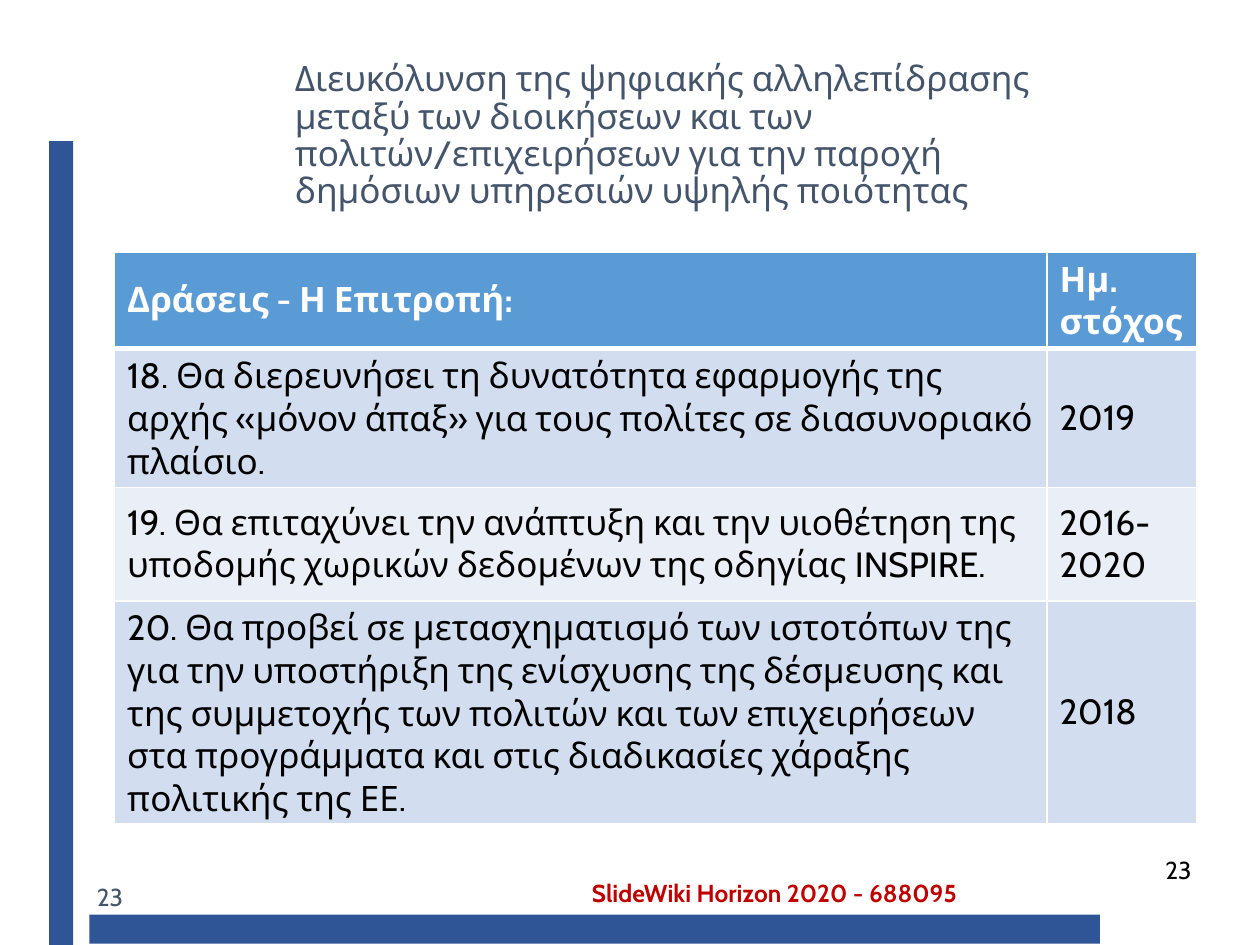
"""Build the slide on digital interaction between administrations and citizens."""
from lxml import etree
from pptx import Presentation
from pptx.dml.color import RGBColor
from pptx.enum import shapes, text
from pptx.oxml import ns
from pptx.util import Inches, Pt

NAVY = RGBColor(0x2F, 0x55, 0x97)
SLATE = RGBColor(0x44, 0x54, 0x6A)
RED = RGBColor(0xC0, 0x00, 0x00)
BLACK = RGBColor(0x00, 0x00, 0x00)
WHITE = RGBColor(0xFF, 0xFF, 0xFF)
HEADER_BLUE = RGBColor(0x5B, 0x9B, 0xD5)
BAND_DARK = RGBColor(0xD2, 0xDE, 0xEF)
BAND_LIGHT = RGBColor(0xEA, 0xEF, 0xF7)


def format_text(frame, size, color, bold=False):
    for para in frame.paragraphs:
        para.alignment = text.PP_ALIGN.LEFT
        for span in para.runs:
            span.font.name = "Cabin"
            span.font.size = Pt(size)
            span.font.bold = bold
            span.font.color.rgb = color


def add_border(properties, side, width):
    line = etree.SubElement(properties, ns.qn("a:" + side), w=str(Pt(width)))
    fill = etree.SubElement(line, ns.qn("a:solidFill"))
    etree.SubElement(fill, ns.qn("a:srgbClr"), val=str(WHITE))


deck = Presentation()
deck.slide_width, deck.slide_height = Inches(10), Inches(7.5)
page = deck.slides.add_slide(deck.slide_layouts[5])

for bounds in [(0.39, 1.12, 0.19, 6.38), (0.71, 7.26, 8.02, 0.23)]:
    bar = page.shapes.add_shape(shapes.MSO_SHAPE.RECTANGLE, *map(Inches, bounds))
    bar.shadow.inherit = False
    bar.fill.solid()
    bar.fill.fore_color.rgb = NAVY
    bar.line.fill.background()

title = page.shapes.title
title.left, title.top = Inches(2.24), Inches(0.44)
title.width, title.height = Inches(6.15), Inches(1.12)
title.text_frame.text = (
    "Διευκόλυνση της ψηφιακής αλληλεπίδρασης μεταξύ των διοικήσεων και των "
    "πολιτών/επιχειρήσεων για την παροχή δημόσιων υπηρεσιών υψηλής ποιότητας"
)
title.text_frame.word_wrap = True
title.text_frame.auto_size = text.MSO_AUTO_SIZE.NONE
title.text_frame.vertical_anchor = text.MSO_ANCHOR.TOP
title.text_frame.paragraphs[0].line_spacing = 0.89
format_text(title.text_frame, 20, SLATE)

labels = [
    ("SlideWiki Horizon 2020 -\u00a0688095", (4.6, 6.92, 3.64, 0.34), RED, True),
    ("23", (0.67, 6.95, 1.02, 0.4), SLATE, False),
    ("23", (9.15, 6.74, 0.76, 0.44), BLACK, False),
]
for words, bounds, color, bold in labels:
    box = page.shapes.add_textbox(*map(Inches, bounds))
    box.text_frame.word_wrap = True
    box.text_frame.text = words
    format_text(box.text_frame, 14, color, bold)

actions = [
    ("Δράσεις - Η Επιτροπή:", "Ημ. στόχος"),
    ("18. Θα διερευνήσει τη δυνατότητα εφαρμογής της αρχής «μόνον άπαξ» "
     "για τους πολίτες σε διασυνοριακό πλαίσιο.", "2019"),
    ("19. Θα επιταχύνει την ανάπτυξη και την υιοθέτηση της υποδομής χωρικών "
     "δεδομένων της οδηγίας INSPIRE.", "2016-2020"),
    ("20. Θα προβεί σε μετασχηματισμό των ιστοτόπων της για την υποστήριξη της "
     "ενίσχυσης της δέσμευσης και της συμμετοχής των πολιτών και των "
     "επιχειρήσεων στα προγράμματα και στις διαδικασίες χάραξης πολιτικής "
     "της ΕΕ.", "2018"),
]
row_heights = [0.64, 0.9, 0.9, 1.43]
row_fills = [HEADER_BLUE, BAND_DARK, BAND_LIGHT, BAND_DARK]
table = page.shapes.add_table(
    len(actions), 2, Inches(0.91), Inches(2), Inches(8.59), Inches(sum(row_heights))
).table
for column, width in zip(table.columns, [7.4, 1.19]):
    column.width = Inches(width)
for index, (row, entries) in enumerate(zip(table.rows, actions)):
    header = index == 0
    row.height = Inches(row_heights[index])
    for cell, words in zip(row.cells, entries):
        cell.text_frame.text = words
        cell.vertical_anchor = text.MSO_ANCHOR.MIDDLE
        format_text(cell.text_frame, 20, WHITE if header else BLACK, header)
        properties = cell._tc.get_or_add_tcPr()
        for side in ("lnL", "lnR", "lnT", "lnB"):
            heavy = (header and side == "lnB") or (index == 1 and side == "lnT")
            add_border(properties, side, 3 if heavy else 1)
        cell.fill.solid()
        cell.fill.fore_color.rgb = row_fills[index]

deck.save("out.pptx")
